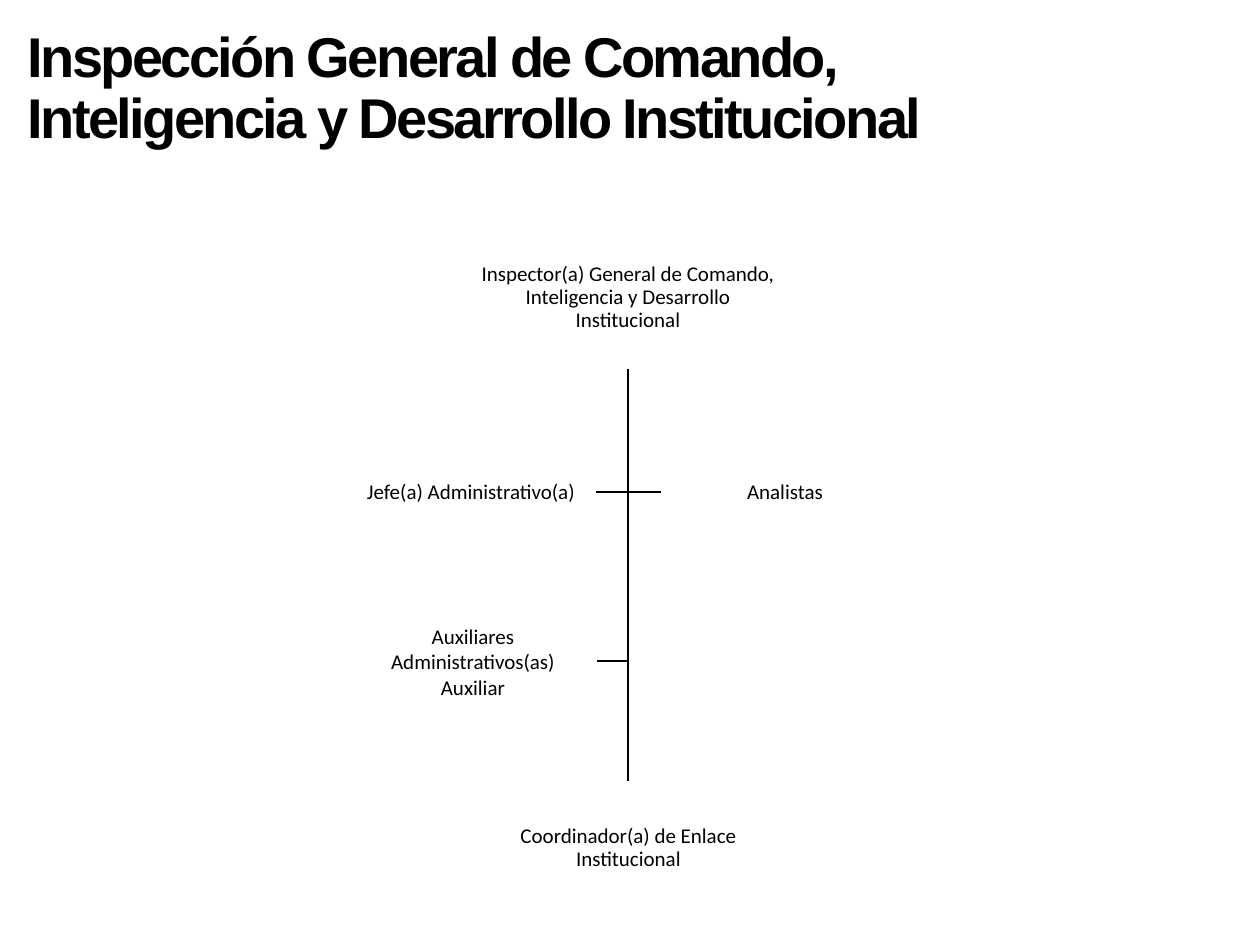
from dataclasses import dataclass

from lxml import etree
from pptx import Presentation
from pptx.dml.color import RGBColor
from pptx.enum.shapes import MSO_CONNECTOR, MSO_SHAPE
from pptx.enum.text import MSO_ANCHOR, MSO_AUTO_SIZE, PP_ALIGN
from pptx.oxml.ns import qn
from pptx.util import Emu, Pt

RECTANGLE = MSO_SHAPE.RECTANGLE
STRAIGHT = MSO_CONNECTOR.STRAIGHT
LEFT, CENTER = PP_ALIGN.LEFT, PP_ALIGN.CENTER
TOP, MIDDLE = MSO_ANCHOR.TOP, MSO_ANCHOR.MIDDLE
NO_AUTOFIT = MSO_AUTO_SIZE.NONE
SCALE = 914400 / 126  # EMU per px


@dataclass
class Theme:
    ink = RGBColor(0, 0, 0)
    paper = RGBColor(255, 255, 255)
    title_font = "Arial"
    title_size = Pt(32)
    title_spacing = "-150"
    box_font = "Calibri"
    box_size = Pt(12)
    line_width = Pt(1)


def px(value):
    return Emu(round(value * SCALE))


def format_text(text_frame, alignment, line_spacing, font_name, size, bold=False):
    text_frame.word_wrap = True
    for paragraph in text_frame.paragraphs:
        paragraph.alignment = alignment
        paragraph.line_spacing = line_spacing
        for run in paragraph.runs:
            run.font.name = font_name
            run.font.size = size
            run.font.bold = bold
            run.font.color.rgb = Theme.ink


presentation = Presentation()
presentation.slide_width, presentation.slide_height = px(1260), px(945)
slide = presentation.slides.add_slide(presentation.slide_layouts[5])
slide.background.fill.solid()
slide.background.fill.fore_color.rgb = Theme.paper

# Title
title = slide.shapes.title
title.left, title.top, title.width, title.height = px(15), px(23), px(940), px(135)
title.text_frame.text = "Inspección General de Comando, Inteligencia y Desarrollo Institucional"
title.text_frame.auto_size = NO_AUTOFIT
title.text_frame.vertical_anchor = TOP
format_text(title.text_frame, LEFT, 0.9, Theme.title_font, Theme.title_size, bold=True)
for run in title.text_frame.paragraphs[0].runs:
    run.font._element.set("spc", Theme.title_spacing)

# Branches: each runs down the trunk, then turns to its box
trunk_x, trunk_top, trunk_bottom = 628, 369, 781
for end_x, end_y in [(597, 661), (661, 492), (596, 492)]:
    builder = slide.shapes.build_freeform(trunk_x, trunk_top, scale=SCALE)
    builder.add_line_segments([(trunk_x, end_y), (end_x, end_y)], close=False)
    branch = builder.convert_to_shape()
    branch.shadow.inherit = False
    branch.fill.background()
    branch.line.color.rgb = Theme.ink
    branch.line.width = Theme.line_width

# Trunk
trunk = slide.shapes.add_connector(
    STRAIGHT, px(trunk_x), px(trunk_top), px(trunk_x), px(trunk_bottom))
trunk.line.color.rgb = Theme.ink
trunk.line.width = Theme.line_width
etree.SubElement(trunk._element.spPr, qn("a:effectLst"))

# Posts: text, left, top, width, height, line spacing
posts = [
    ("Inspector(a) General de Comando, Inteligencia y Desarrollo Institucional",
     470, 226, 316, 143, 0.9),
    ("Coordinador(a) de Enlace Institucional", 495, 781, 267, 134, 0.9),
    ("Jefe(a) Administrativo(a)", 347, 430, 248, 125, 0.9),
    ("Analistas", 661, 430, 248, 125, 0.9),
    ("Auxiliares Administrativos(as)\nAuxiliar", 349, 599, 248, 125, 1.0),
]
for text, left, top, width, height, line_spacing in posts:
    box = slide.shapes.add_shape(RECTANGLE, px(left), px(top), px(width), px(height))
    box.shadow.inherit = False
    box.fill.solid()
    box.fill.fore_color.rgb = Theme.paper
    box.line.fill.background()
    text_frame = box.text_frame
    text_frame.text = text
    text_frame.vertical_anchor = MIDDLE
    text_frame.margin_left = text_frame.margin_right = px(1)
    text_frame.margin_top = text_frame.margin_bottom = px(1)
    format_text(text_frame, CENTER, line_spacing, Theme.box_font, Theme.box_size)

presentation.save("out.pptx")
